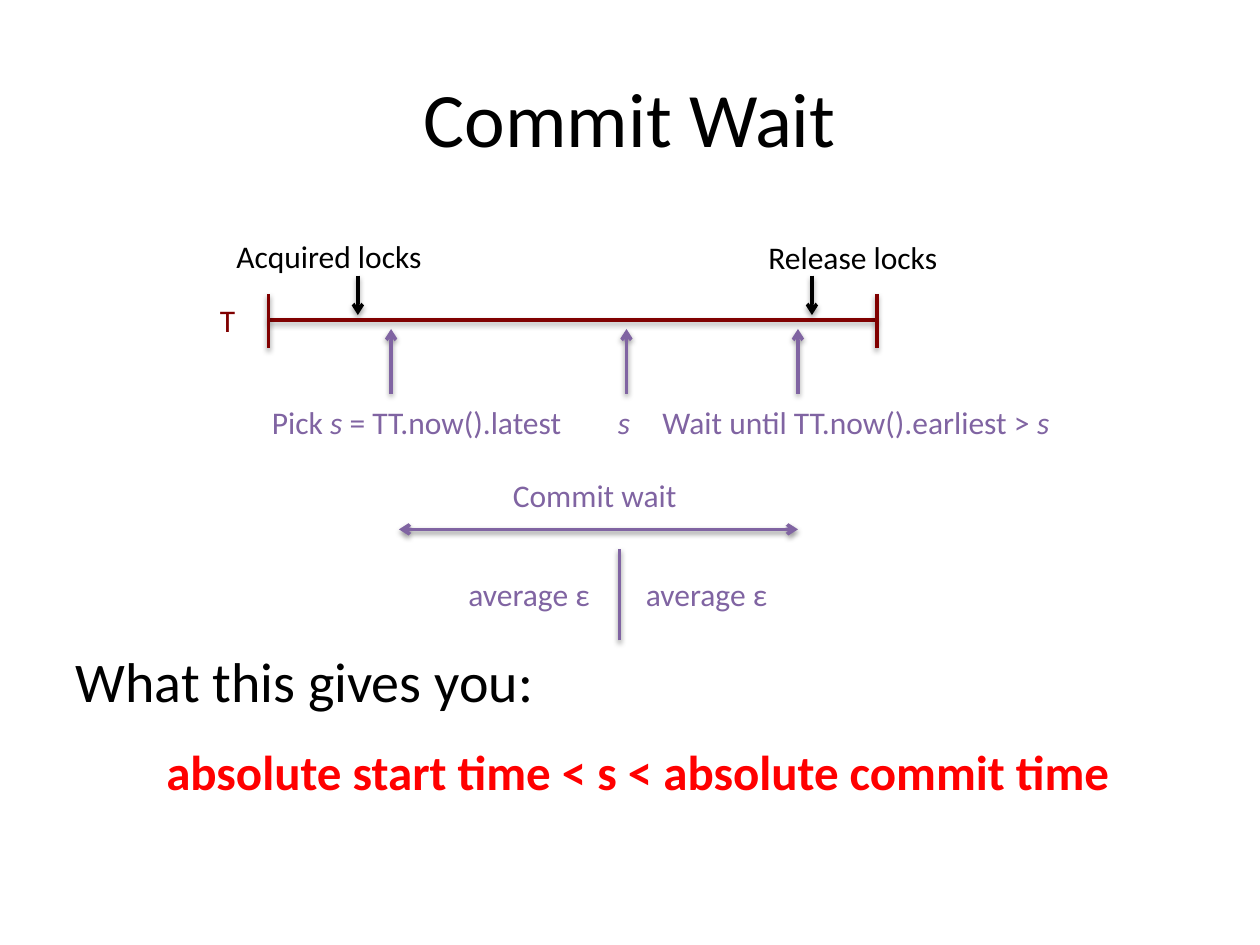
"""Build the Commit Wait slide with its transaction timeline."""
from dataclasses import dataclass

from lxml.etree import SubElement
from pptx import Presentation
from pptx.dml.color import RGBColor
from pptx.enum.shapes import MSO_CONNECTOR as Connector
from pptx.enum.text import MSO_ANCHOR as Anchor, MSO_AUTO_SIZE as AutoSize, PP_ALIGN as Align
from pptx.oxml.ns import qn
from pptx.util import Pt

FONT = "Calibri"
COLORS = {"text": "000000", "transaction": "800000", "commit": "8064A2", "result": "FF0000"}
START, END, AXIS = 153.5, 501, 183
TICK_TOP, TICK_BOTTOM = 168, 199
PICK, CHOSEN, WAIT = 223.5, 358, 456


@dataclass
class Line:
    """A straight line, with optional arrowheads at its start and end."""
    start: tuple[float, float]
    end: tuple[float, float]
    color: str
    head: bool = False
    tail: bool = False


@dataclass
class Label:
    """A text box in which asterisks enclose italic words."""
    text: str
    left: float
    top: float
    width: float
    color: str = "commit"
    size: float = 18
    height: float = 29
    bold: bool = False
    wrap: bool = False


TIMELINE = [
    Line((START, AXIS), (END, AXIS), "transaction"),
    *(Line((x, TICK_TOP), (x, TICK_BOTTOM), "transaction") for x in (START, END)),
]
LINES = [
    *(Line((x, 157.5), (x, 180), "text", tail=True) for x in (204.5, 464)),
    *(Line((x, 225), (x, 188), "commit", tail=True) for x in (PICK, CHOSEN, WAIT)),
    Line((228, 302.5), (WAIT, 302.5), "commit", head=True, tail=True),
    Line((354, 366), (354, 313.5), "commit"),
]
LABELS = [
    Label("T", 118.5, 168.5, 32.5, "transaction", wrap=True),
    Label("Acquired locks", 128, 132, 122, "text"),
    Label("Release locks", 432, 132.5, 112, "text"),
    Label("Pick *s* = TT.now().latest", 148.3, 227, 184),
    Label("*s*", 346, 227, 22),
    Label("Wait until TT.now().earliest > *s*", 371.5, 227, 244),
    Label("Commit wait", 286, 268.5, 109),
    Label("average ε", 260.6, 325, 86),
    Label("average ε", 362, 325, 86),
    Label("absolute start time < s < absolute commit time", 88, 420, 560, "result", 28, 41, True),
]


def color_of(name: str) -> RGBColor:
    """Return the named palette colour."""
    return RGBColor.from_string(COLORS[name])


def style(paragraph, size: float, color: str, bold: bool = False) -> None:
    """Set the font of a whole paragraph."""
    font = paragraph.font
    font.name, font.size, font.bold = FONT, Pt(size), bold
    font.color.rgb = color_of(color)


def place(shape, left: float, top: float, width: float, height: float) -> None:
    """Move and size a shape."""
    shape.left, shape.top, shape.width, shape.height = map(Pt, (left, top, width, height))


def draw_line(shapes, line: Line) -> None:
    """Draw a line with its arrowheads and soft shadow."""
    connector = shapes.add_connector(Connector.STRAIGHT, *map(Pt, line.start + line.end))
    connector.line.width = Pt(2)
    connector.line.color.rgb = color_of(line.color)
    properties = connector._element.spPr
    outline = properties.find(qn("a:ln"))
    for present, tag in ((line.head, "a:headEnd"), (line.tail, "a:tailEnd")):
        if present:
            SubElement(outline, qn(tag), type="arrow")
    effects = SubElement(properties, qn("a:effectLst"))
    shadow = SubElement(effects, qn("a:outerShdw"), blurRad=str(Pt(3.1)), dist=str(Pt(1.6)),
                        dir="5400000", rotWithShape="0")
    shadow_color = SubElement(shadow, qn("a:srgbClr"), val=COLORS["text"])
    SubElement(shadow_color, qn("a:alpha"), val="38000")


def draw_label(shapes, label: Label) -> None:
    """Draw a text box."""
    box = shapes.add_textbox(*map(Pt, (label.left, label.top, label.width, label.height)))
    frame = box.text_frame
    frame.word_wrap = label.wrap
    frame.auto_size = AutoSize.SHAPE_TO_FIT_TEXT
    paragraph = frame.paragraphs[0]
    style(paragraph, label.size, label.color, label.bold)
    for index, part in enumerate(label.text.split("*")):
        if part:
            run = paragraph.add_run()
            run.text = part
            run.font.italic = index % 2 == 1


def fill_placeholders(slide) -> None:
    """Write the title and the unbulleted body line."""
    title, body = slide.shapes.title, slide.placeholders[1]
    place(title, 36, 21.6, 648, 90)
    title.text_frame.text = "Commit Wait"
    title.text_frame.vertical_anchor = Anchor.MIDDLE
    heading = title.text_frame.paragraphs[0]
    heading.alignment = Align.CENTER
    style(heading, 44, "text")

    place(body, 36, 366, 648, 116.5)
    body.text_frame.text = "What this gives you:"
    paragraph = body.text_frame.paragraphs[0]
    style(paragraph, 32, "text")
    properties = paragraph._p.get_or_add_pPr()
    properties.set("marL", "0")
    properties.set("indent", "0")
    properties.insert(0, properties.makeelement(qn("a:buNone")))


def main() -> None:
    """Build and save the presentation."""
    presentation = Presentation()
    presentation.slide_width, presentation.slide_height = Pt(720), Pt(540)
    slide = presentation.slides.add_slide(presentation.slide_layouts[1])
    fill_placeholders(slide)
    timeline = slide.shapes.add_group_shape()
    for line in TIMELINE:
        draw_line(timeline.shapes, line)
    for line in LINES:
        draw_line(slide.shapes, line)
    for label in LABELS:
        draw_label(slide.shapes, label)
    presentation.save("out.pptx")


if __name__ == "__main__":
    main()
